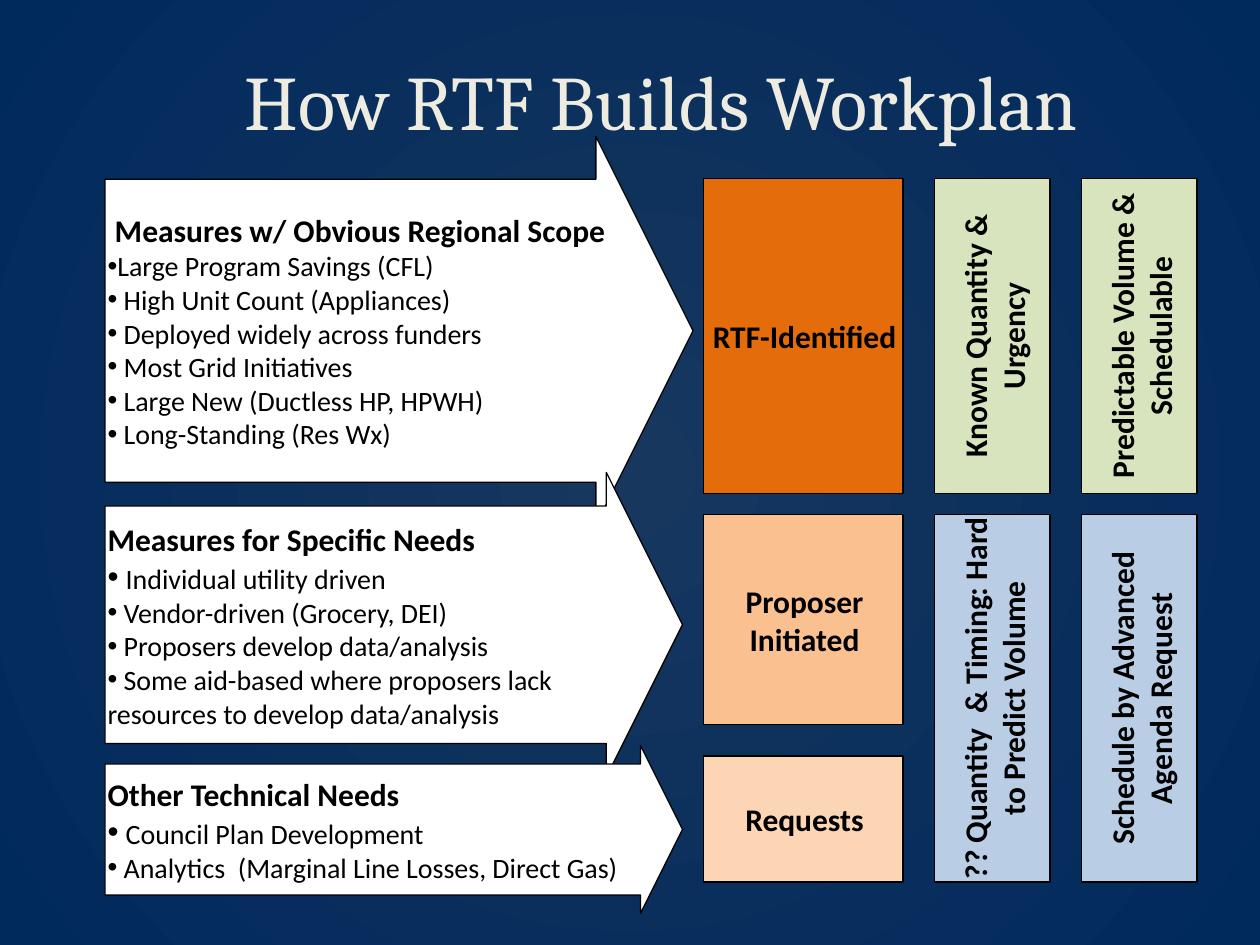
from lxml import etree
from pptx import Presentation
from pptx import util as u
from pptx.dml.color import RGBColor
from pptx.enum import shapes, text
from pptx.oxml import parse_xml
from pptx.oxml.ns import nsdecls, qn

Pt = u.Pt
rgb = RGBColor.from_string
INSETS = dict(margin_left=Pt(1.5), margin_top=0, margin_right=0, margin_bottom=0,
              word_wrap=True, vertical_anchor=text.MSO_ANCHOR.MIDDLE)


def add_block(kind, box, color):
    """Add an outlined shape and return it with its text frame set up."""
    sp = s.shapes.add_shape(kind, *map(Pt, box))
    sp.shadow.inherit = False
    sp.fill.solid()
    sp.fill.fore_color.rgb = rgb(color)
    sp.line.color.rgb = rgb("000000")
    sp.line.width = Pt(0.75)
    for name, value in INSETS.items():
        setattr(sp.text_frame, name, value)
    return sp


def add_run(p, words, size, bold=False, font="Calibri", color="000000"):
    r = p.add_run()
    r.text = words
    for name, value in dict(size=Pt(size), bold=bold, name=font).items():
        setattr(r.font, name, value)
    r.font.color.rgb = rgb(color)


prs = Presentation()
prs.slide_width, prs.slide_height = Pt(720), Pt(540)
s = prs.slides.add_slide(prs.slide_layouts[6])

# Radial background
fill = s.background.fill
fill.gradient()
for stop, color, pos in zip(fill.gradient_stops, ("17375E", "00295C"), (0, 1)):
    stop.color.rgb = rgb(color)
    stop.position = pos
grad = s.background._cSld.bg.bgPr.find(qn("a:gradFill"))
grad.replace(grad.find(qn("a:lin")), parse_xml(
    f'<a:path {nsdecls("a")} path="circle">'
    '<a:fillToRect l="50000" t="50000" r="50000" b="50000"/></a:path>'))

# Title
tf = s.shapes.add_textbox(Pt(54), Pt(12), Pt(648), Pt(90)).text_frame
tf.word_wrap = True
tf.vertical_anchor = text.MSO_ANCHOR.MIDDLE
p = tf.paragraphs[0]
p.alignment = text.PP_ALIGN.CENTER
add_run(p, "How RTF Builds Workplan", 44, font="Cambria", color="EEECE1")

# Arrows: top, width, height, heading, bullets
arrows = [
    (78, 336, 222, " Measures w/ Obvious Regional Scope",
     ["Large Program Savings (CFL)", " High Unit Count (Appliances)",
      " Deployed widely across funders", " Most Grid Initiatives",
      " Large New (Ductless HP, HPWH)", " Long-Standing (Res Wx)"]),
    (270, 330, 174, "Measures for Specific Needs",
     [" Individual utility driven", " Vendor-driven (Grocery, DEI)",
      " Proposers develop data/analysis",
      " Some aid-based where proposers lack resources to develop data/analysis"]),
    (426, 330, 96, "Other Technical Needs",
     [" Council Plan Development", " Analytics  (Marginal Line Losses, Direct Gas)"]),
]
for top, width, height, heading, bullets in arrows:
    sp = add_block(shapes.MSO_SHAPE.RIGHT_ARROW, (60, top, width, height), "FFFFFF")
    sp.adjustments[0], sp.adjustments[1] = 0.78, 0.25
    tf = sp.text_frame
    tf.paragraphs[0].alignment = text.PP_ALIGN.LEFT
    add_run(tf.paragraphs[0], heading, 18, bold=True)
    for i, words in enumerate(bullets):
        p = tf.add_paragraph()
        p.alignment = text.PP_ALIGN.LEFT
        pPr = p._p.get_or_add_pPr()
        etree.SubElement(pPr, qn("a:buFont"), typeface="Arial")
        etree.SubElement(pPr, qn("a:buChar"), char="•")
        if i == 0 and words.startswith(" "):  # the larger space enlarges the bullet
            add_run(p, " ", 18)
            words = words[1:]
        add_run(p, words, 16)

# Boxes: left, top, width, height, fill, label
boxes = [
    (402, 102, 114, 180, "E46C0A", "RTF-Identified"),
    (402, 294, 114, 120, "FAC090", "Proposer Initiated"),
    (402, 432, 114, 72, "FCD5B5", "Requests"),
    (534, 102, 66, 180, "D7E4BD", "Known Quantity & Urgency"),
    (618, 102, 66, 180, "D7E4BD", "Predictable Volume & Schedulable"),
    (534, 294, 66, 210, "B9CDE5", "?? Quantity  & Timing: Hard to Predict Volume"),
    (618, 294, 66, 210, "B9CDE5", "Schedule by Advanced Agenda Request"),
]
for *box, color, label in boxes:
    tf = add_block(shapes.MSO_SHAPE.RECTANGLE, box, color).text_frame
    if box[2] < box[3] / 2:  # narrow columns read upwards
        tf._txBody.bodyPr.set("vert", "vert270")
    p = tf.paragraphs[0]
    p.alignment = text.PP_ALIGN.CENTER
    add_run(p, label, 18, bold=True)

prs.save("out.pptx")
